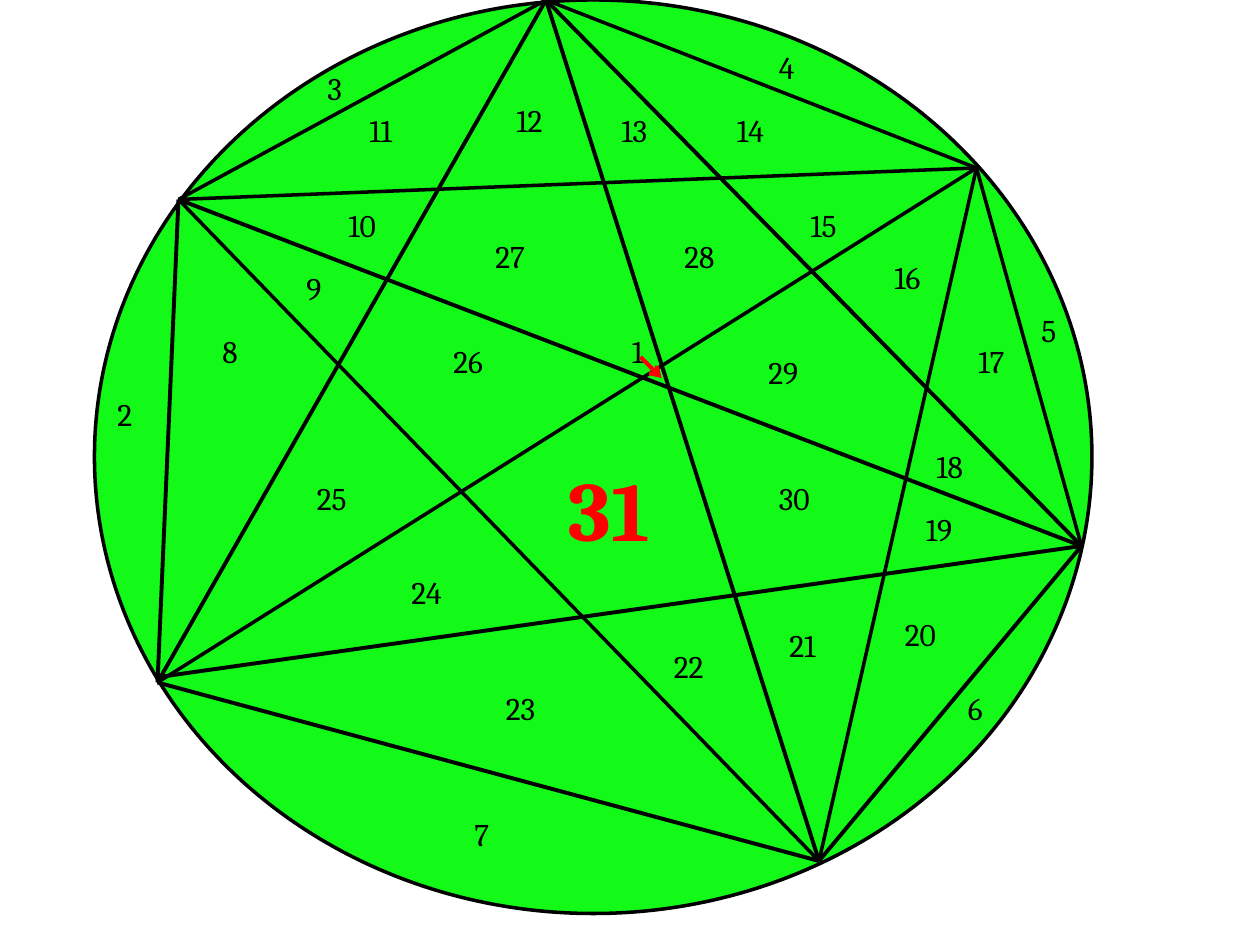
from itertools import combinations

from lxml import etree
from pptx import Presentation
from pptx.dml.color import RGBColor
from pptx.enum.shapes import MSO_CONNECTOR, MSO_SHAPE
from pptx.enum.text import MSO_AUTO_SIZE
from pptx.oxml.ns import qn
from pptx.util import Pt

STRAIGHT = MSO_CONNECTOR.STRAIGHT
OVAL = MSO_SHAPE.OVAL
GROW = MSO_AUTO_SIZE.SHAPE_TO_FIT_TEXT

PX = 9525  # EMU in one px, 96 px to the inch
CELL = 8   # px in one step of the label grid
FONT = "Cambria"
COLORS = {"disc": "13F918", "ink": "000000", "mark": "FF0000"}

# Points on the rim, clockwise from the top
POINTS = {
    "A": (416, 0), "B": (744, 128), "C": (824, 416),
    "D": (624, 656), "E": (120, 520), "F": (136, 152),
}
THIN = {"AB", "BC", "BD", "BE", "BF", "AF", "DF"}
SHIFTED = {"CE": ((824, 416), (120, 516))}

# Left, top and width of the labels 1 to 30, in grid cells
LABELS = [
    (59, 31, 4), (10, 37, 4), (30, 6, 4), (73, 4, 4), (98, 29, 4),
    (91, 65, 4), (44, 77, 4), (20, 31, 4), (28, 25, 4), (32, 19, 6),
    (34, 10, 6), (48, 9, 6), (58, 10, 6), (69, 10, 8), (76, 19, 6),
    (84, 24, 6), (92, 32, 6), (88, 42, 6), (87, 48, 6), (85, 58, 6),
    (74, 59, 7), (63, 61, 6), (47, 65, 6), (38, 54, 6), (29, 45, 7),
    (42, 32, 6), (46, 22, 6), (64, 22, 6), (72, 33, 7), (73, 45, 7),
]


def px(*vals):
    return [val * PX for val in vals]


def color(name):
    return RGBColor.from_string(COLORS[name])


def add_disc(slide, box):
    disc = slide.shapes.add_shape(OVAL, *px(*box))
    disc.shadow.inherit = False
    disc.fill.solid()
    disc.fill.fore_color.rgb = color("disc")
    disc.line.color.rgb = color("ink")
    disc.line.width = Pt(2)


def add_line(slide, start, end, width, ink="ink"):
    line = slide.shapes.add_connector(STRAIGHT, *px(*start, *end))
    line.line.color.rgb = color(ink)
    line.line.width = Pt(width)
    etree.SubElement(line._element.spPr, qn("a:effectLst"))
    return line


def add_arrow(slide, start, end):
    arrow = add_line(slide, start, end, 2.25, "mark")
    etree.SubElement(arrow.line._get_or_add_ln(), qn("a:tailEnd"), type="arrow")


def add_label(slide, text, box, size=18, ink="ink", bold=False):
    label = slide.shapes.add_textbox(*px(*box))
    frame = label.text_frame
    frame.word_wrap = True
    frame.auto_size = GROW
    frame.text = text
    font = frame.paragraphs[0].runs[0].font
    font.name = FONT
    font.size = Pt(size)
    font.bold = bold
    font.color.rgb = color(ink)


def add_chords(slide):
    """Join every pair of points on the rim."""
    for one, two in combinations(POINTS, 2):
        pair = one + two
        start, end = SHIFTED.get(pair, (POINTS[one], POINTS[two]))
        add_line(slide, start, end, 2 if pair in THIN else 2.25)


def main():
    prs = Presentation()
    prs.slide_width, prs.slide_height = px(960, 720)
    slide = prs.slides.add_slide(prs.slide_layouts[6])
    add_disc(slide, (72, 0, 760, 696))
    add_chords(slide)
    for num, (left, top, width) in enumerate(LABELS, 1):
        add_label(slide, str(num), (left * CELL, top * CELL, width * CELL, 38))
    add_label(slide, "31", (424, 344, 104, 87), 48, "mark", True)
    add_arrow(slide, (488, 272), (504, 288))
    prs.save("out.pptx")


if __name__ == "__main__":
    main()
